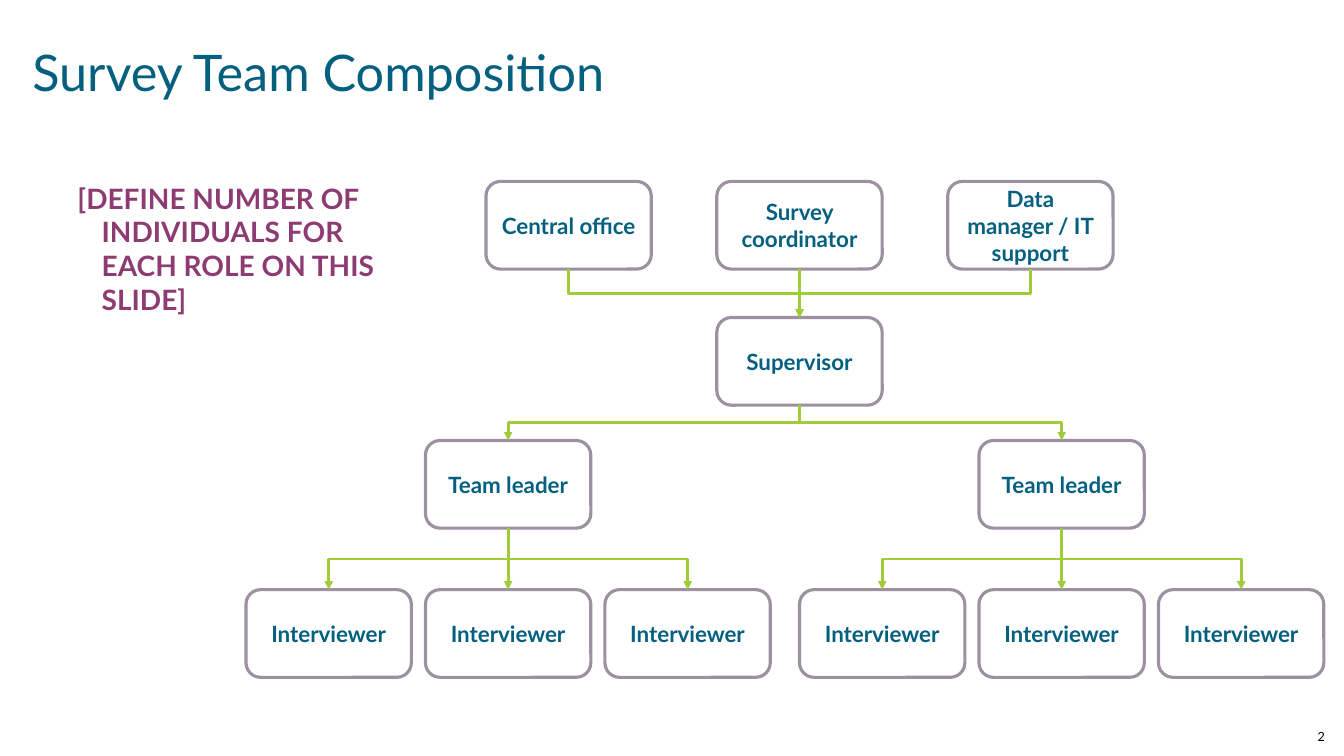
import dataclasses
import lxml.etree
import pptx
import pptx.dml.color
import pptx.enum.shapes
import pptx.enum.text
import pptx.oxml.ns
import pptx.util

Inches = pptx.util.Inches
ALIGN = pptx.enum.text.PP_ALIGN
ANCHOR = pptx.enum.text.MSO_ANCHOR
LINK = pptx.enum.shapes.MSO_CONNECTOR
qn = pptx.oxml.ns.qn


@dataclasses.dataclass
class Theme:
    font: str = "Lato"
    teal: str = "04607E"
    plum: str = "8D3B72"
    black: str = "000000"
    outline: str = "9D90A0"
    green: str = "A1CC3A"
    title_size: int = 36
    note_size: int = 20
    box_size: int = 16
    number_size: int = 9
    box_line: float = 2.25
    link_line: float = 2


theme = Theme()


def style(para, size, color, bold=False, align=ALIGN.LEFT):
    para.alignment = align
    para.font.name = theme.font
    para.font.size = pptx.util.Pt(size)
    para.font.bold = bold
    para.font.color.rgb = pptx.dml.color.RGBColor.from_string(color)


def draw_line(line, color, width):
    line.color.rgb = pptx.dml.color.RGBColor.from_string(color)
    line.width = pptx.util.Pt(width)


deck = pptx.Presentation()
deck.slide_width, deck.slide_height = Inches(13.33), Inches(7.5)
deck._element.set("firstSlideNum", "2")
page = deck.slides.add_slide(deck.slide_layouts[5])

# Title
title = page.shapes.title
title.left, title.top = Inches(0.22), Inches(0.08)
title.width, title.height = Inches(12.92), Inches(1.25)
title.text_frame.text = "Survey Team Composition"
title.text_frame.vertical_anchor = ANCHOR.MIDDLE
style(title.text_frame.paragraphs[0], theme.title_size, theme.teal)

# Instruction with a hanging indent
note = page.shapes.add_textbox(Inches(0.67), Inches(1.75), Inches(3.25), Inches(3.58))
note.text_frame.word_wrap = True
para = note.text_frame.paragraphs[0]
para.text = "[DEFINE NUMBER OF INDIVIDUALS FOR EACH ROLE ON THIS SLIDE]"
style(para, theme.note_size, theme.plum, bold=True)
para.space_after = pptx.util.Pt(7.5)
indent = Inches(0.24)
para._p.get_or_add_pPr().set("marL", str(indent))
para._p.get_or_add_pPr().set("indent", str(-indent))

# Chart grid: office row, supervisor row, then two teams of three columns
box_width, box_height = 1.64, 0.87
office_row, supervisor_row, leader_row, interviewer_row = 1.8, 3.15, 4.37, 5.85
supervisor_left, office_step = 7.11, 2.29
team_lefts, team_step = (2.44, 7.93), 1.78

# Roles: name, label, left, top
roles = [("supervisor", "Supervisor", supervisor_left, supervisor_row)]
links = []
offices = ("Central office", "Survey coordinator", "Data manager / IT support")
for column, office in enumerate(offices):
    roles.append((office, office, supervisor_left + (column - 1) * office_step, office_row))
    links.append((office, "supervisor"))
for team, team_left in enumerate(team_lefts):
    leader = f"leader {team}"
    roles.append((leader, "Team leader", team_left + team_step, leader_row))
    links.append(("supervisor", leader))
    for column in range(3):
        interviewer = f"interviewer {team} {column}"
        roles.append((interviewer, "Interviewer", team_left + column * team_step, interviewer_row))
        links.append((leader, interviewer))

# Role boxes
boxes = {}
for name, label, left, top in roles:
    box = page.shapes.add_shape(
        pptx.enum.shapes.MSO_SHAPE.ROUNDED_RECTANGLE,
        Inches(left), Inches(top), Inches(box_width), Inches(box_height))
    box.shadow.inherit = False
    box.fill.background()
    draw_line(box.line, theme.outline, theme.box_line)
    box.text_frame.word_wrap = True
    box.text_frame.vertical_anchor = ANCHOR.MIDDLE
    box.text_frame.text = label
    style(box.text_frame.paragraphs[0], theme.box_size, theme.teal, True, ALIGN.CENTER)
    boxes[name] = box

# Reporting lines: bottom of the upper box to top of the lower box
for upper_name, lower_name in links:
    upper, lower = boxes[upper_name], boxes[lower_name]
    start_x, start_y = upper.left + upper.width // 2, upper.top + upper.height
    end_x, end_y = lower.left + lower.width // 2, lower.top
    straight = abs(end_x - start_x) < Inches(0.02)
    link = page.shapes.add_connector(
        LINK.STRAIGHT if straight else LINK.ELBOW, start_x, start_y, end_x, end_y)
    link.begin_connect(upper, 2)
    link.end_connect(lower, 0)
    if not straight:
        # An elbow leaves sideways, so lay it on its side and turn it downwards
        middle_x, middle_y = (start_x + end_x) // 2, (start_y + end_y) // 2
        rightward = end_x > start_x
        reach = (end_y - start_y) // 2 * (-1 if rightward else 1)
        spread = abs(end_x - start_x) // 2
        link.begin_x, link.end_x = middle_x - reach, middle_x + reach
        link.begin_y, link.end_y = middle_y - spread, middle_y + spread
        link.rotation = 270 if rightward else 90
    draw_line(link.line, theme.green, theme.link_line)
    lxml.etree.SubElement(link.line._get_or_add_ln(), qn("a:tailEnd"), type="triangle")
    lxml.etree.SubElement(link._element.spPr, qn("a:effectLst"))

# Slide number field
number = page.shapes.add_textbox(Inches(12.33), Inches(6.98), Inches(0.81), Inches(0.4))
frame = number.text_frame
frame.margin_left = frame.margin_right = frame.margin_top = frame.margin_bottom = 0
frame.vertical_anchor = ANCHOR.BOTTOM
frame.word_wrap = True
para = frame.paragraphs[0]
span = para.add_run()
span.text = "2"
style(para, theme.number_size, theme.black, align=ALIGN.RIGHT)
span._r.tag = qn("a:fld")
span._r.set("id", "{B6F15528-21DE-4FAA-801E-634DDDAF4B2B}")
span._r.set("type", "slidenum")

deck.save("out.pptx")
